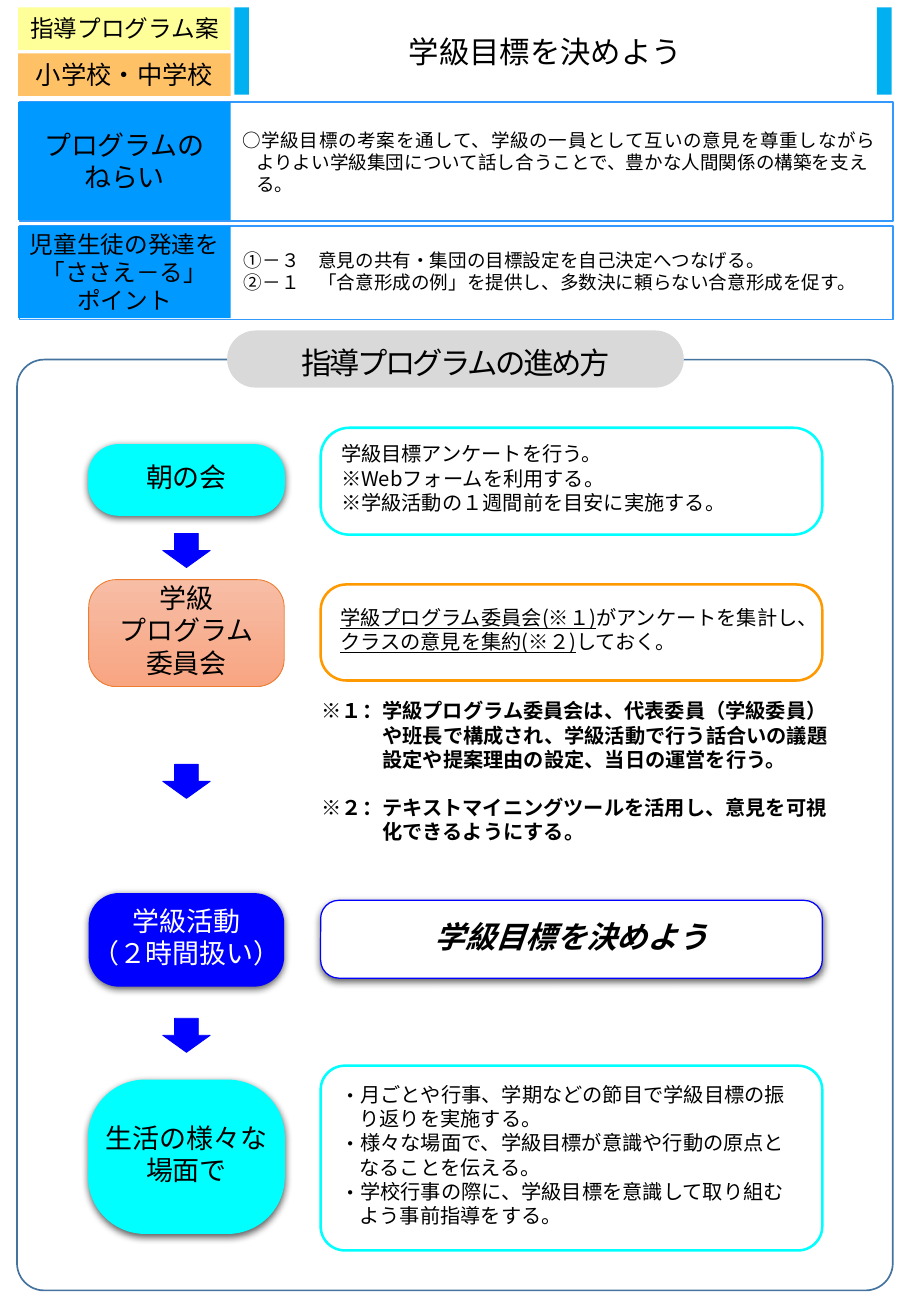
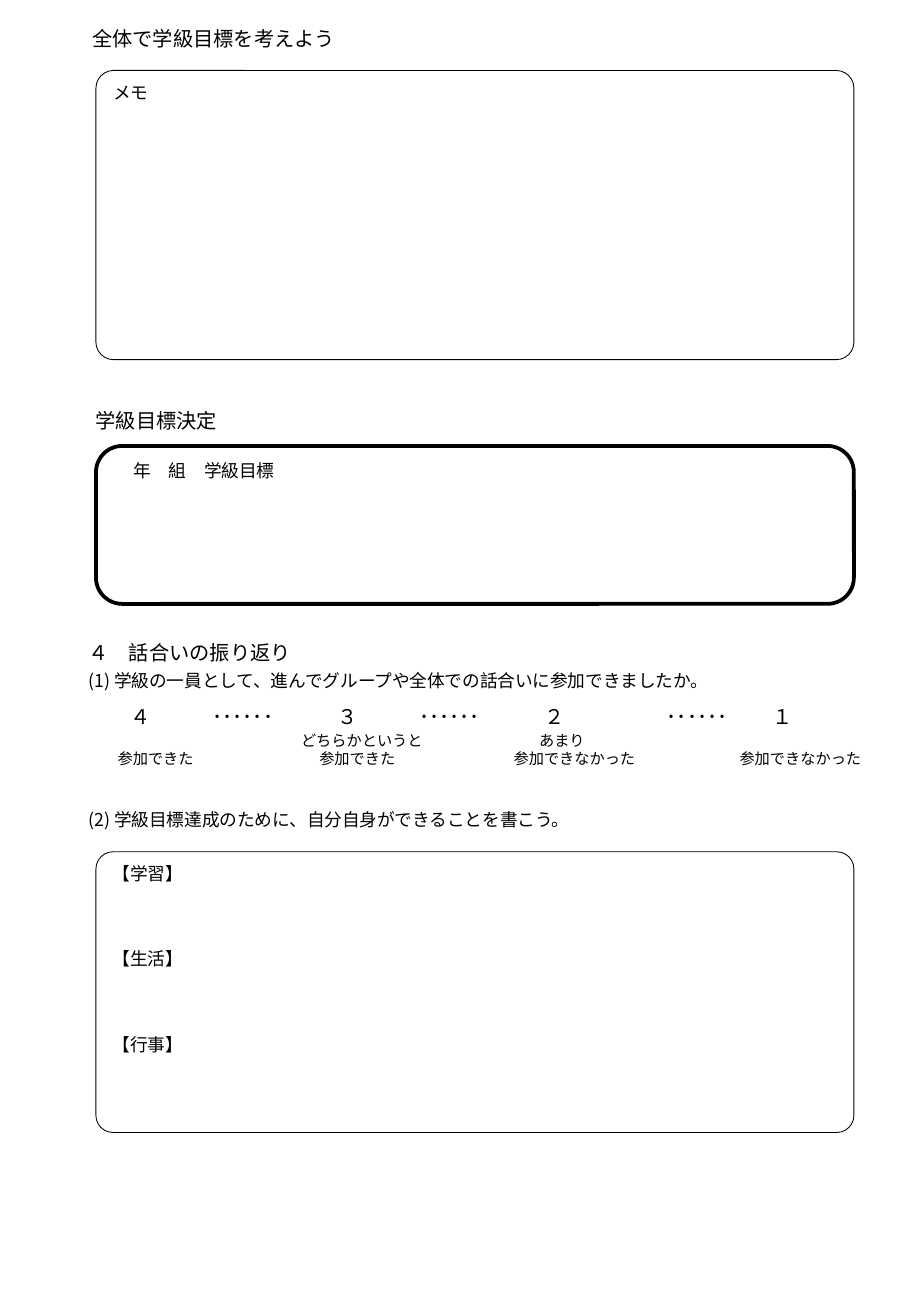
import pptx
import pptx.util
import pptx.dml.color
import pptx.enum.shapes
import pptx.enum.text
import pptx.oxml.ns
import pptx.oxml.xmlchemy

PX = 9144
NOTO, CALI = "Noto Sans CJK JP", "Calibri"
HUES = {
    "black": "000000", "white": "FFFFFF", "cyan": "00FFFF", "blue": "0000FF",
    "sky": "00B0F0", "azure": "0099FF", "edge": "3399FF", "steel": "43739E",
    "gray": "D9D9D9", "amber": "FF9900", "lemon": "FFFF99", "rust": "ED7D31",
    "peach": "F7BDA5", "coral": "F8A582",
}
KIND = pptx.enum.shapes.MSO_SHAPE
RECT, ROUND, ARROW = KIND.RECTANGLE, KIND.ROUNDED_RECTANGLE, KIND.DOWN_ARROW
ALIGN = pptx.enum.text.PP_ALIGN
LEFT, MID = ALIGN.LEFT, ALIGN.CENTER
ANCHOR = pptx.enum.text.MSO_ANCHOR
CARD = (10, 0, 10, 5)


def px(n):
    return pptx.util.Emu(n * PX)


def hue(name):
    return pptx.dml.color.RGBColor.from_string(HUES[name])


def node(home, tag, **marks):
    item = pptx.oxml.xmlchemy.OxmlElement(tag)
    for key, val in marks.items():
        item.set(key, str(val))
    home.append(item)
    return item


def add_run(para, text, size, font=NOTO, color="black", bold=False,
            slant=False, under=False, space=0):
    run = para.add_run()
    run.text = text
    face = run.font
    face.size = pptx.util.Pt(size)
    face.bold, face.italic, face.underline = bold, slant, under
    face.color.rgb = hue(color)
    face.name = font
    props = run._r.get_or_add_rPr()
    node(props, "a:ea", typeface=NOTO)
    if space:
        props.set("spc", str(round(space * 100)))


def write(shape, lines, size, align=LEFT, anchor=ANCHOR.MIDDLE, wrap=True,
          inset=(10, 5, 10, 5), gap=0, pitch=1, hang=0, dents=(), **style):
    frame = shape.text_frame
    frame.auto_size = pptx.enum.text.MSO_AUTO_SIZE.NONE
    frame.word_wrap = wrap
    frame.vertical_anchor = anchor
    (frame.margin_left, frame.margin_top,
     frame.margin_right, frame.margin_bottom) = map(px, inset)
    for i, line in enumerate(lines):
        para = frame.paragraphs[0] if i == 0 else frame.add_paragraph()
        para.alignment = align
        para.line_spacing = pitch
        para.space_before = pptx.util.Pt(gap if i else 0)
        dent = dents[i] if dents else hang
        props = para._p.get_or_add_pPr()
        props.set("marL", str(dent * PX))
        props.set("indent", str(-hang * PX))
        for part in [(line, {})] if isinstance(line, str) else line:
            if part == "break":
                para.add_line_break()
            else:
                add_run(para, part[0], size, **{**style, **part[1]})


def add_text(slide, box, lines, size, **style):
    shape = slide.shapes.add_textbox(*map(px, box))
    write(shape, lines, size, **style)


def add_box(slide, kind, box, fill=None, line=None, width=1, adj=None,
            alpha=None, glow=False):
    shape = slide.shapes.add_shape(kind, *map(px, box))
    shape.shadow.inherit = False
    if adj is not None:
        shape.adjustments[0] = adj
    if isinstance(fill, tuple):
        shape.fill.gradient()
        shape.fill.gradient_angle = 270
        for stop, name in zip(shape.fill.gradient_stops, fill):
            stop.color.rgb = hue(name)
    elif fill:
        shape.fill.solid()
        shape.fill.fore_color.rgb = hue(fill)
    else:
        shape.fill.background()
    if alpha:
        tint = shape._element.spPr.find(".//" + pptx.oxml.ns.qn("a:srgbClr"))
        node(tint, "a:alpha", val=alpha * 1000)
    if line:
        shape.line.color.rgb = hue(line)
        shape.line.width = pptx.util.Pt(width)
    else:
        shape.line.fill.background()
    if glow:
        effects = shape._element.spPr.find(pptx.oxml.ns.qn("a:effectLst"))
        shade = node(effects, "a:outerShdw", blurRad=57150, dist=19050,
                     dir=5400000, algn="ctr", rotWithShape=0)
        node(node(shade, "a:srgbClr", val=HUES["black"]), "a:alpha", val=63000)
    return shape


def add_label(slide, box, fill, lines, size, alpha=None):
    shape = add_box(slide, RECT, box, fill, alpha=alpha)
    write(shape, lines, size, align=MID, wrap=False, font=CALI)


def add_step(slide, top, high, lines, fill, line, adj, color="black",
             width=0.75, glow=True):
    shape = add_box(slide, ROUND, (73, top, 161, high), fill, line, width,
                    adj, glow=glow)
    write(shape, lines, 16, align=MID, wrap=False, inset=CARD, color=color)


def add_card(slide, top, high, line, adj, width=1.5, glow=False):
    return add_box(slide, ROUND, (264, top, 413, high),
                   None if high > 100 else "white", line, width, adj, glow=glow)


def set_title(slide, box, text, size, **style):
    title = slide.shapes.title
    title.left, title.top, title.width, title.height = map(px, box)
    write(title, [text], size, **style)


def add_head(slide):
    set_title(slide, (204, 7, 490, 70), "学級目標を決めよう", 18, align=MID)
    for left in (193, 722):
        add_box(slide, RECT, (left, 6, 12, 72), "sky")
    add_label(slide, (15, 6, 175, 35), "lemon", ["指導プログラム案"], 14)
    add_label(slide, (15, 44, 175, 35), "amber", ["小学校・中学校"], 15, 60)
    for top, high, size, lines in (
            (84, 98, 16, ["プログラムの", "ねらい"]),
            (186, 77, 14, ["児童生徒の発達を", "「ささえ－る」", "ポイント"])):
        add_box(slide, RECT, (16, top, 719, high), line="edge")
        add_label(slide, (15, top, 175, high - 1), "azure", lines, size)
    goal = [("○", {}),
            ("学級目標の考案を通して、学級の一員として互いの意見を尊重しながら",
             {"space": 0.4}), "break",
            ("よりよい学級集団について話し合うことで、豊かな人間関係の構築を支える。", {})]
    add_text(slide, (190, 85, 544, 97), [goal], 11, hang=11)
    add_text(slide, (191, 186, 543, 74), [
        "①－３　意見の共有・集団の目標設定を自己決定へつなげる。",
        "②－１　「合意形成の例」を提供し、多数決に頼らない合意形成を促す。"], 11)


def add_flow(slide):
    add_box(slide, ROUND, (14, 296, 721, 766), line="steel", adj=0.031)
    pill = add_box(slide, ROUND, (187, 272, 376, 47), "gray", adj=0.5)
    write(pill, ["指導プログラムの進め方"], 18, align=MID, pitch=1.2, space=-1.5)
    for top in (439, 629, 838):
        add_box(slide, ARROW, (134, top, 39, 28), "blue", "blue", 0.5)

    add_step(slide, 366, 58, ["朝の会"], "cyan", "cyan", 0.427)
    add_step(slide, 477, 88, ["学級", "プログラム", "委員会"],
             ("peach", "coral"), "rust", 0.258, width=0.5, glow=False)
    add_step(slide, 735, 77, ["学級活動", "（２時間扱い）"], "blue", None,
             0.322, color="white")
    add_step(slide, 889, 126, ["生活の様々な", "場面で"], "cyan", "cyan", 0.369)

    write(add_card(slide, 352, 88, "cyan", 0.269), [
        "学級目標アンケートを行う。", "※Webフォームを利用する。",
        "※学級活動の１週間前を目安に実施する。"], 12, inset=CARD)
    mark = {"under": True}
    write(add_card(slide, 481, 79, "amber", 0.269), [
        [("学級プログラム委員会(※１)", mark), ("がアンケートを集計し、", {})],
        [("クラスの意見を集約(※２)", mark), ("しておく。", {})]], 12, inset=CARD)
    write(add_card(slide, 741, 64, "blue", 0.233, 0.75, True),
          ["学級目標を決めよう"], 18, align=MID, inset=CARD, bold=True, slant=True)
    add_card(slide, 877, 152, "cyan", 0.131)

    add_text(slide, (255, 570, 440, 131), [
        "※１：学級プログラム委員会は、代表委員（学級委員）や班長で構成され、"
        "学級活動で行う話合いの議題設定や提案理由の設定、当日の運営を行う。",
        "※２：テキストマイニングツールを活用し、意見を可視化できるようにする。"],
        12, anchor=ANCHOR.TOP, hang=50, gap=14, bold=True)


def add_list(slide):
    body = slide.placeholders[1]
    body.left, body.top, body.width, body.height = map(px, (270, 877, 395, 152))
    write(body, [
        "月ごとや行事、学期などの節目で学級目標の振り返りを実施する。",
        "様々な場面で、学級目標が意識や行動の原点となることを伝える。",
        "学校行事の際に、学級目標を意識して取り組むよう事前指導をする。"],
        12, inset=CARD, hang=16)
    for para in body.text_frame.paragraphs:
        props = para._p.get_or_add_pPr()
        node(props, "a:buFont", typeface=NOTO)
        node(props, "a:buChar", char="・")


def add_scale(slide):
    for text, mid in (("４", 116), ("･･････", 200), ("３", 286), ("･･････", 370),
                      ("２", 457), ("･･････", 574), ("１", 644)):
        add_text(slide, (mid - 40, 575, 80, 30), [text], 12, align=MID)
    for left, lines, dents in (
            (87, ["参加できた"], (0,)),
            (238, ["どちらかというと", "参加できた"], (0, 15)),
            (413, ["あまり", "参加できなかった"], (21, 0)),
            (599, ["参加できなかった"], (0,))):
        add_text(slide, (left, 597, 132, 40), lines, 9, anchor=ANCHOR.BOTTOM,
                 dents=dents)


def add_sheet(slide):
    top = ANCHOR.TOP
    set_title(slide, (66, 17, 234, 30), "全体で学級目標を考えよう", 12,
              anchor=top, wrap=False)
    for y, high, adj, width, lines, style in (
            (58, 238, 0.061, 0.5, ["メモ"], {}),
            (367, 130, 0.167, 2.25, ["年　組　学級目標"],
             {"font": CALI, "dents": (15,)}),
            (701, 231, 0.061, 0.5, ["【学習】", "【生活】", "【行事】"], {"gap": 38})):
        box = add_box(slide, ROUND, (79, y, 624, high), None, "black", width, adj)
        write(box, lines, 10.5, anchor=top, **style)
    for left, y, text, size in (
            (69, 331, "学級目標決定", 12),
            (63, 522, "４　話合いの振り返り", 12),
            (63, 546, "(1) 学級の一員として、進んでグループや全体での話合いに参加できましたか。", 10.5),
            (63, 661, "(2) 学級目標達成のために、自分自身ができることを書こう。", 10.5)):
        add_text(slide, (left, y, 635, 29), [text], size, anchor=top)
    add_scale(slide)


def main():
    deck = pptx.Presentation()
    deck.slide_width, deck.slide_height = px(750), px(1083)
    plan = deck.slides.add_slide(deck.slide_layouts[1])
    add_head(plan)
    add_flow(plan)
    add_list(plan)
    add_sheet(deck.slides.add_slide(deck.slide_layouts[5]))
    deck.save("out.pptx")


if __name__ == "__main__":
    main()
